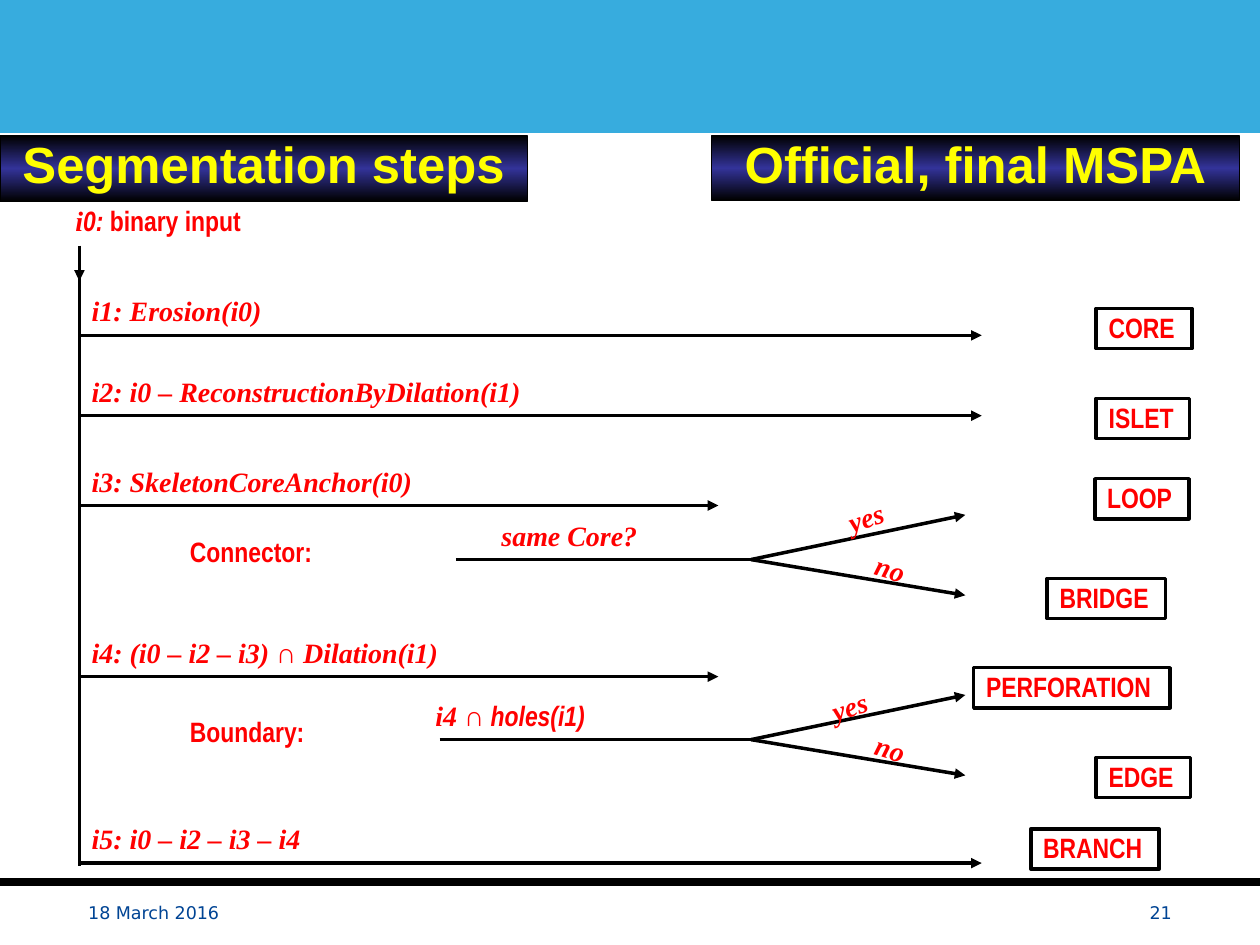
from copy import deepcopy
from dataclasses import dataclass

from lxml.etree import SubElement
from pptx import Presentation
from pptx.dml.color import RGBColor as Color
from pptx.enum.dml import MSO_LINE
from pptx.enum.shapes import MSO_CONNECTOR as Connector, MSO_SHAPE as Preset
from pptx.enum.text import MSO_ANCHOR as Anchor, MSO_AUTO_SIZE as AutoSize, PP_ALIGN as Align
from pptx.oxml.ns import qn
from pptx.util import Cm, Pt


@dataclass(frozen=True)
class Theme:
    sky: Color = Color.from_string("37ACDE")
    black: Color = Color.from_string("000000")
    indigo: Color = Color.from_string("333399")
    yellow: Color = Color.from_string("FFFF00")
    red: Color = Color.from_string("FF0000")
    navy: Color = Color.from_string("004494")
    serif: str = "Times New Roman"
    narrow: str = "Arial Narrow"
    heading_font: str = "Arial"
    footer_font: str = "DejaVu Sans"
    heading_size: int = 29
    body_size: int = 16
    footer_size: int = 10
    spacing: float = 0.87


THEME = Theme()
WIDTH, HEIGHT = 25.4, 19.05
TRUNK_X, TRUNK_TOP, TRUNK_END = 1.6, 4.95, 17.45
FORK_X, TIP_X = 15.14, 19.46
LABEL_HEIGHT, BOX_HEIGHT = 0.76, 0.81
TEXT_RISE = 0.87

HEADINGS = [("Segmentation steps", 0, 1.32), ("Official, final MSPA", 14.35, 1.3)]
INPUT = [("i", THEME.serif, True), ("0:", THEME.narrow, True), (" binary input", THEME.narrow, False)]
STEPS = [
    ("i1: Erosion(i0)", 6.76, 19.79, 4.09),
    ("i2: i0 – ReconstructionByDilation(i1)", 8.38, 19.79, 9.35),
    ("i3: SkeletonCoreAnchor(i0)", 10.19, 14.48, 7.14),
    ("i4: (i0 – i2 – i3) ∩ Dilation(i1)", 13.64, 14.48, 7.7),
    ("i5: i0 – i2 – i3 – i4", 17.4, 19.79, 4.88),
]
DECISIONS = [
    dict(name="Connector:", name_width=2.97, y=11.28, start=9.19, left=9.86, width=3.4,
         question=[("same Core?", THEME.serif, True)], yes=(16.84, 10.03)),
    dict(name="Boundary:", name_width=2.82, y=14.91, start=8.86, left=8.53, width=3.58,
         question=[("i4 ", THEME.serif, True), ("∩ holes(i1)", THEME.narrow, True)],
         yes=(16.51, 13.84)),
]
CLASSES = [
    ("CORE", 22.1, 6.22, 1.93),
    ("ISLET", 22.1, 8.03, 1.88),
    ("LOOP", 22.07, 9.65, 1.9),
    ("BRIDGE", 21.11, 11.66, 2.39),
    ("PERFORATION", 19.63, 13.46, 3.96),
    ("EDGE", 22.1, 15.27, 1.9),
    ("BRANCH", 20.78, 16.71, 2.59),
]
FOOTERS = [("18 March 2016", 1.78, Align.LEFT), ("21", 17.7, Align.RIGHT)]


def set_margins(text_frame, horizontal, vertical):
    text_frame.margin_left = text_frame.margin_right = Cm(horizontal)
    text_frame.margin_top = text_frame.margin_bottom = Cm(vertical)


def style_font(font, name, size, color, bold=False, italic=False):
    font.name, font.size, font.bold, font.italic = name, Pt(size), bold, italic
    font.color.rgb = color


def add_rectangle(slide, left, top, width, height, line_color, line_width):
    shape = slide.shapes.add_shape(Preset.RECTANGLE, Cm(left), Cm(top), Cm(width), Cm(height))
    shape.shadow.inherit = False
    shape.line.color.rgb, shape.line.width = line_color, Pt(line_width)
    shape.line.dash_style = MSO_LINE.SOLID
    return shape


def add_line(slide, start, end, arrow=False, width=2):
    line = slide.shapes.add_connector(Connector.STRAIGHT, *map(Cm, start + end))
    line.line.color.rgb, line.line.width = THEME.black, Pt(width)
    if arrow:
        SubElement(line.line._get_or_add_ln(), qn("a:tailEnd"), type="triangle")
    SubElement(line._element.spPr, qn("a:effectLst"))


def write_label(shape, pieces):
    text_frame = shape.text_frame
    set_margins(text_frame, 0.25, 0.13)
    text_frame.word_wrap = False
    text_frame.auto_size = AutoSize.SHAPE_TO_FIT_TEXT
    text_frame.vertical_anchor = Anchor.TOP
    paragraph = text_frame.paragraphs[0]
    paragraph.alignment, paragraph.line_spacing = Align.LEFT, THEME.spacing
    for text, font, italic in pieces:
        run = paragraph.add_run()
        run.text = text
        style_font(run.font, font, THEME.body_size, THEME.red, True, italic)


def add_label(slide, pieces, left, top, width, rotation=0):
    shape = slide.shapes.add_textbox(Cm(left), Cm(top), Cm(width), Cm(LABEL_HEIGHT))
    shape.rotation = rotation
    write_label(shape, pieces)


def add_heading(slide, text, left, height):
    shape = add_rectangle(slide, left, 2.74, 10.64, height, THEME.black, 0.75)
    shape.fill.gradient()
    shape.fill.gradient_angle = 90
    first = shape._element.spPr.find(".//" + qn("a:gs"))
    first.addnext(deepcopy(first))
    for stop, position, color in zip(shape.fill.gradient_stops, (0, 0.5, 1),
                                     (THEME.black, THEME.indigo, THEME.black)):
        stop.position, stop.color.rgb = position, color
    text_frame = shape.text_frame
    set_margins(text_frame, 0.23, 0.1)
    text_frame.text = text
    text_frame.word_wrap = True
    text_frame.auto_size = AutoSize.SHAPE_TO_FIT_TEXT
    text_frame.vertical_anchor = Anchor.TOP
    paragraph = text_frame.paragraphs[0]
    paragraph.alignment, paragraph.line_spacing = Align.CENTER, THEME.spacing
    style_font(paragraph.runs[0].font, THEME.heading_font, THEME.heading_size, THEME.yellow, True)


def add_step(slide, text, y, end, width):
    add_line(slide, (TRUNK_X, y), (end, y), arrow=True)
    add_label(slide, [(text, THEME.serif, True)], TRUNK_X, y - TEXT_RISE, width)


def add_decision(slide, name, name_width, y, start, left, width, question, yes):
    add_label(slide, [(name, THEME.narrow, False)], 3.58, y - 0.55, name_width)
    add_line(slide, (start, y), (FORK_X, y))
    add_label(slide, question, left, y - TEXT_RISE, width)
    for offset in (-0.9, 0.72):
        add_line(slide, (FORK_X, y), (TIP_X, y + offset), arrow=True)
    add_label(slide, [("yes", THEME.serif, True)], *yes, 1.37, 342.5)
    add_label(slide, [("no", THEME.serif, True)], 17.4, y - 0.18, 1.24, 16.6)


def add_class(slide, name, left, top, width):
    shape = add_rectangle(slide, left, top, width, BOX_HEIGHT, THEME.black, 2)
    shape.fill.background()
    write_label(shape, [(name, THEME.narrow, False)])


def add_footer(slide, text, left, alignment):
    text_frame = slide.shapes.add_textbox(Cm(left), Cm(18.19), Cm(5.92), Cm(0.43)).text_frame
    set_margins(text_frame, 0, 0)
    text_frame.word_wrap = True
    text_frame.text = text
    paragraph = text_frame.paragraphs[0]
    paragraph.alignment = alignment
    style_font(paragraph.runs[0].font, THEME.footer_font, THEME.footer_size, THEME.navy)


def main():
    """Build the segmentation steps slide."""
    presentation = Presentation()
    presentation.slide_width, presentation.slide_height = Cm(WIDTH), Cm(HEIGHT)
    slide = presentation.slides.add_slide(presentation.slide_layouts[6])
    banner = add_rectangle(slide, 0, 0, WIDTH, 2.67, THEME.sky, 0.75)
    banner.fill.solid()
    banner.fill.fore_color.rgb = THEME.sky
    add_line(slide, (TRUNK_X, TRUNK_TOP), (TRUNK_X, TRUNK_END))
    add_line(slide, (TRUNK_X, 5.13), (TRUNK_X, 5.66), arrow=True)
    add_label(slide, INPUT, 1.27, 4.06, 3.86)
    for step in STEPS:
        add_step(slide, *step)
    for decision in DECISIONS:
        add_decision(slide, **decision)
    for result in CLASSES:
        add_class(slide, *result)
    for footer in FOOTERS:
        add_footer(slide, *footer)
    add_line(slide, (0, 17.78), (WIDTH, 17.78), width=4.5)
    for heading in HEADINGS:
        add_heading(slide, *heading)
    presentation.save("out.pptx")


if __name__ == "__main__":
    main()
